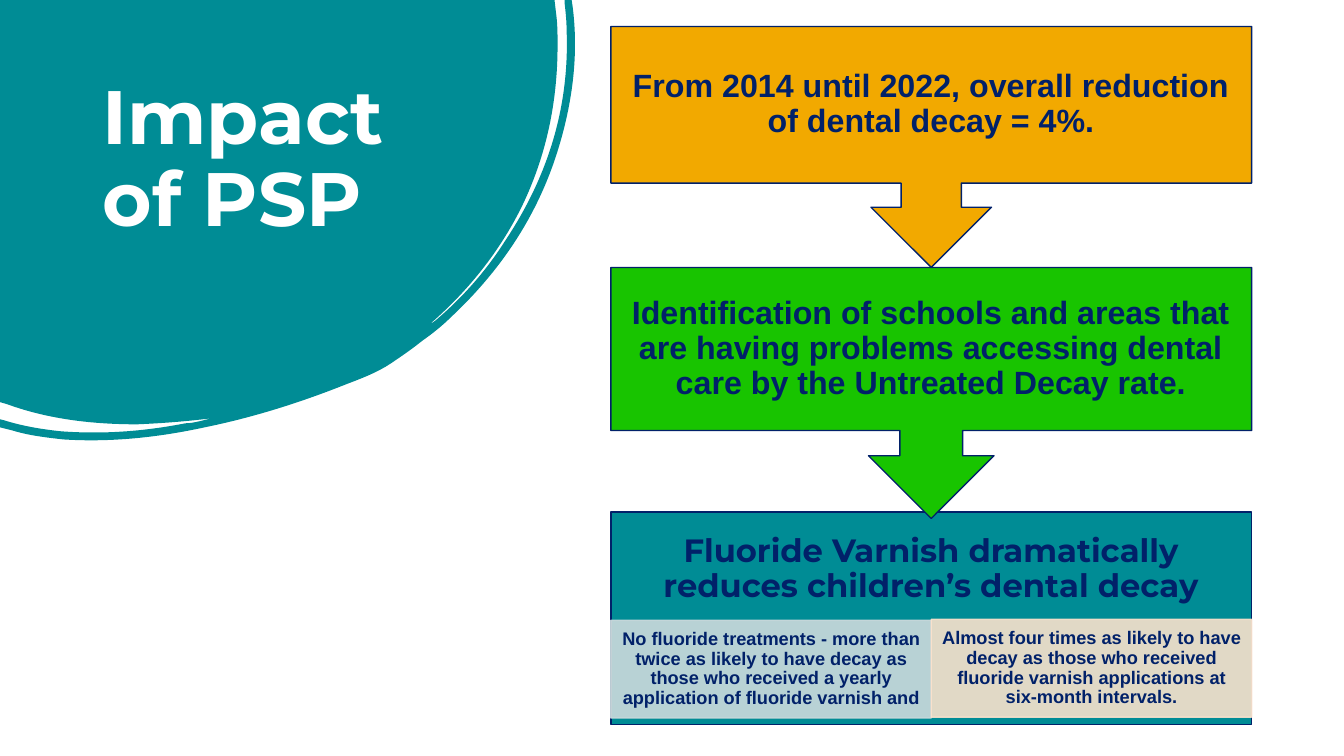
from dataclasses import dataclass

from lxml import etree
from pptx import Presentation
from pptx.dml.color import RGBColor
from pptx.enum.shapes import MSO_SHAPE
from pptx.enum.text import MSO_ANCHOR, PP_ALIGN
from pptx.oxml.ns import qn
from pptx.util import Inches, Pt

RECTANGLE = MSO_SHAPE.RECTANGLE
CALLOUT = MSO_SHAPE.DOWN_ARROW_CALLOUT
TOP, MIDDLE = MSO_ANCHOR.TOP, MSO_ANCHOR.MIDDLE
LEFT, CENTER = PP_ALIGN.LEFT, PP_ALIGN.CENTER

SLIDE_WIDTH, SLIDE_HEIGHT = Inches(13.33), Inches(7.5)
COLUMN, ROW = SLIDE_WIDTH / 100, SLIDE_HEIGHT / 100
BLOB_UNIT = SLIDE_WIDTH / 13.33

COLORS = {
    "teal": "008C95",
    "navy": "012169",
    "white": "FFFFFF",
    "green": "18C400",
    "amber": "F2A900",
    "mist": "CCDADD",
    "sand": "FAE2CC",
}

FLOW_LEFT, FLOW_WIDTH = 45.45, 47.68
NOTE_WIDTH = FLOW_WIDTH / 2
NOTE_HEIGHT = 12.93


@dataclass(frozen=True)
class Frame:
    column: float
    row: float
    columns: float
    rows: float

    def lengths(self) -> tuple[int, int, int, int]:
        return (round(self.column * COLUMN), round(self.row * ROW),
                round(self.columns * COLUMN), round(self.rows * ROW))


@dataclass(frozen=True)
class Wording:
    text: str
    size: float
    font: str = "Arial"
    color: str = "navy"
    align: PP_ALIGN = CENTER
    anchor: MSO_ANCHOR = MIDDLE
    margins: tuple[float, float, float, float] = (1.35, 2.4, 1.35, 2.4)


@dataclass(frozen=True)
class Block:
    kind: MSO_SHAPE
    frame: Frame
    fill: str
    line: str
    wording: Wording
    opacity: int = 100


NOTE_MARGINS = (0.75, 0.27, 0.75, 0.27)

TITLE_FRAME = Frame(6.9, 9.83, 26.41, 29.6)
TITLE = Wording("Impact of PSP", 54, "Montserrat", "white", LEFT, TOP,
                (0.75, 0.67, 0.75, 0.67))

BLOCKS = [
    Block(RECTANGLE, Frame(FLOW_LEFT, 67.73, FLOW_WIDTH, 28.1), "teal", "navy",
          Wording("Fluoride Varnish dramatically reduces children’s dental decay",
                  23, "Montserrat", margins=(1.35, 2.4, 1.35, 15.33))),
    Block(RECTANGLE, Frame(FLOW_LEFT, 82.05, NOTE_WIDTH, NOTE_HEIGHT), "mist", "mist",
          Wording("No fluoride treatments - more than twice as likely to have decay "
                  "as those who received a yearly application of fluoride varnish and",
                  13, margins=NOTE_MARGINS), 90),
    Block(RECTANGLE, Frame(FLOW_LEFT + NOTE_WIDTH, 81.93, NOTE_WIDTH, NOTE_HEIGHT),
          "sand", "sand",
          Wording("Almost four times as likely to have decay as those who received "
                  "fluoride varnish applications at six-month intervals.",
                  13, margins=NOTE_MARGINS), 90),
    Block(CALLOUT, Frame(FLOW_LEFT, 35.38, FLOW_WIDTH, 33.2), "green", "navy",
          Wording("Identification of schools and areas that are having problems "
                  "accessing dental care by the Untreated Decay rate.", 23)),
    Block(CALLOUT, Frame(FLOW_LEFT, 3.51, FLOW_WIDTH, 31.87), "amber", "navy",
          Wording("From 2014 until 2022, overall reduction of dental decay = 4%.", 23)),
]

BLOB_OUTLINE = [
    (5.5, 0), (5.52, 0.17),
    (5.53, 0.26, 5.53, 0.36, 5.53, 0.45),
    (5.53, 1.01, 5.42, 1.54, 5.18, 2.04),
    (4.96, 2.49, 4.65, 2.88, 4.27, 3.21),
    (4.29, 3.21, 4.3, 3.19, 4.32, 3.18),
    (4.59, 2.95, 4.82, 2.69, 5.01, 2.39),
    (5.43, 1.76, 5.65, 1.07, 5.62, 0.3),
    (5.62, 0.21, 5.61, 0.12, 5.6, 0.03),
    (5.6, 0), (5.67, 0), (5.68, 0.07),
    (5.74, 0.54, 5.68, 1.02, 5.53, 1.5),
    (5.33, 2.14, 4.97, 2.68, 4.48, 3.14),
    (4.39, 3.23, 4.29, 3.31, 4.19, 3.38),
    (4.09, 3.46, 3.99, 3.53, 3.87, 3.61),
    (3.75, 3.69, 3.6, 3.75, 3.44, 3.81),
    (2.99, 3.99, 2.52, 4.14, 2.03, 4.24),
    (1.57, 4.34, 1.1, 4.39, 0.63, 4.36),
    (0.45, 4.34, 0.28, 4.32, 0.12, 4.27),
    (0, 4.24), (0, 4.16), (0.04, 4.17),
    (0.23, 4.23, 0.42, 4.26, 0.61, 4.28),
    (1.03, 4.31, 1.43, 4.28, 1.84, 4.2),
    (1.89, 4.2, 1.93, 4.19, 1.98, 4.18),
    (2.02, 4.17, 2.06, 4.16, 2.1, 4.15),
    (1.86, 4.18, 1.61, 4.2, 1.36, 4.21),
    (0.92, 4.21, 0.48, 4.16, 0.07, 4.01),
    (0, 3.99),
]


def rgb(name: str) -> RGBColor:
    return RGBColor.from_string(COLORS[name])


def bend(segment, piece: tuple[float, ...]) -> None:
    segment.tag = qn("a:cubicBezTo")
    for index, (x, y) in enumerate((piece[:2], piece[2:4])):
        control = etree.Element(qn("a:pt"))
        control.set("x", str(round(x * BLOB_UNIT)))
        control.set("y", str(round(y * BLOB_UNIT)))
        segment.insert(index, control)


def draw_blob(page) -> None:
    ends = [(piece[-2] * BLOB_UNIT, piece[-1] * BLOB_UNIT) for piece in BLOB_OUTLINE]
    builder = page.shapes.build_freeform(0, 0)
    builder.add_line_segments(ends, close=True)
    blob = builder.convert_to_shape()
    segments = list(blob.element.spPr.iter(qn("a:lnTo")))
    for segment, piece in zip(segments, BLOB_OUTLINE):
        if len(piece) == 6:
            bend(segment, piece)
    blob.shadow.inherit = False
    blob.fill.solid()
    blob.fill.fore_color.rgb = rgb("teal")
    blob.line.fill.background()


def write(box, wording: Wording) -> None:
    frame = box.text_frame
    frame.word_wrap = True
    frame.vertical_anchor = wording.anchor
    left, top, right, bottom = wording.margins
    frame.margin_left, frame.margin_right = round(left * COLUMN), round(right * COLUMN)
    frame.margin_top, frame.margin_bottom = round(top * ROW), round(bottom * ROW)
    para = frame.paragraphs[0]
    para.alignment = wording.align
    para.line_spacing = 0.9
    span = para.add_run()
    span.text = wording.text
    span.font.name = wording.font
    span.font.size = Pt(wording.size)
    span.font.bold = True
    span.font.color.rgb = rgb(wording.color)


def draw_block(page, block: Block) -> None:
    box = page.shapes.add_shape(block.kind, *block.frame.lengths())
    box.shadow.inherit = False
    box.fill.solid()
    box.fill.fore_color.rgb = rgb(block.fill)
    box.line.color.rgb = rgb(block.line)
    box.line.width = Pt(1)
    if block.opacity < 100:
        for color in box.element.spPr.iter(qn("a:srgbClr")):
            etree.SubElement(color, qn("a:alpha")).set("val", str(block.opacity * 1000))
    write(box, block.wording)


def main() -> None:
    deck = Presentation()
    deck.slide_width, deck.slide_height = SLIDE_WIDTH, SLIDE_HEIGHT
    page = deck.slides.add_slide(deck.slide_layouts[6])
    draw_blob(page)
    write(page.shapes.add_textbox(*TITLE_FRAME.lengths()), TITLE)
    for block in BLOCKS:
        draw_block(page, block)
    deck.save("out.pptx")


if __name__ == "__main__":
    main()
